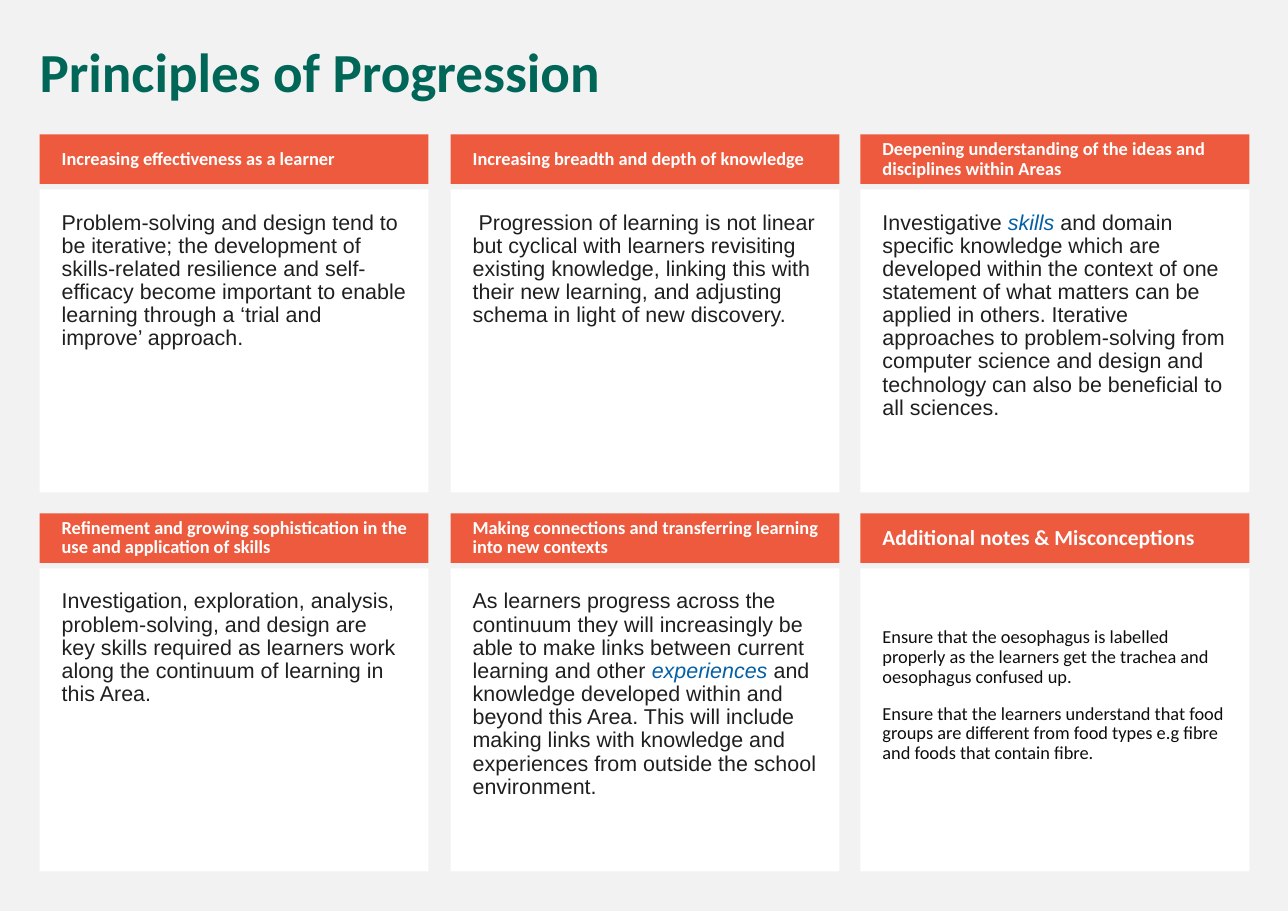
from dataclasses import dataclass

from pptx import Presentation
from pptx import util as u
from pptx.dml import color
from pptx.enum import shapes, text

HUES = {
    "back": "F2F2F2",
    "card": "FFFFFF",
    "head": "ED5A3E",
    "title": "006758",
    "body": "1F1F1F",
    "link": "0360A6",
    "note": "0D0D0D",
}

# Grid of cards
COLS = (0.36, 4.09, 7.81)
TOP, PITCH = 1.22, 3.44
WIDTH, HEAD_H, BODY_H = 3.53, 0.45, 2.75
BODY_DY = 0.5


@dataclass
class Card:
    head: str
    body: tuple[str, ...]  # words between asterisks are linked terms
    head_size: int = 12
    size: int = 14
    font: str = "Arial"
    hue: str = "body"
    inset: float = 0.2


CARDS = [
    Card("Increasing effectiveness as a learner",
         ("Problem-solving and design tend to be iterative; the development of "
          "skills-related resilience and self-efficacy become important to "
          "enable learning through a ‘trial and improve’ approach.",)),
    Card("Increasing breadth and depth of knowledge",
         (" Progression of learning is not linear but cyclical with learners "
          "revisiting existing knowledge, linking this with their new learning, "
          "and adjusting schema in light of new discovery.",)),
    Card("Deepening understanding of the ideas and disciplines within Areas",
         ("Investigative *skills* and domain specific knowledge which are "
          "developed within the context of one statement of what matters can be "
          "applied in others. Iterative approaches to problem-solving from "
          "computer science and design and technology can also be beneficial to "
          "all sciences.",)),
    Card("Refinement and growing sophistication in the use and application of skills",
         ("Investigation, exploration, analysis, problem-solving, and design are "
          "key skills required as learners work along the continuum of learning "
          "in this Area.",)),
    Card("Making connections and transferring learning into new contexts",
         ("As learners progress across the continuum they will increasingly be "
          "able to make links between current learning and other *experiences* "
          "and knowledge developed within and beyond this Area. This will include "
          "making links with knowledge and experiences from outside the school "
          "environment.",)),
    Card("Additional notes & Misconceptions",
         ("Ensure that the oesophagus is labelled properly as the "
          "learners get the trachea and oesophagus confused up. ",
          "Ensure that the learners understand that food groups "
          "are different from food types e.g fibre and foods "
          "that contain fibre."),
         head_size=14, size=12, font="Calibri", hue="note", inset=0.54),
]


def rgb(name: str) -> color.RGBColor:
    return color.RGBColor.from_string(HUES[name])


def write(shape, *paras: str, size: int, hue: str, font: str = "Calibri",
          bold: bool = False, anchor=text.MSO_ANCHOR.TOP,
          pad: tuple[float, ...] = (0.1, 0.05, 0.1, 0.05)) -> None:
    """Fill a shape with paragraphs; pad is left, top, right, bottom."""
    frame = shape.text_frame
    frame.word_wrap = True
    frame.auto_size = text.MSO_AUTO_SIZE.NONE
    frame.vertical_anchor = anchor
    (frame.margin_left, frame.margin_top,
     frame.margin_right, frame.margin_bottom) = map(u.Inches, pad)
    for num, words in enumerate(paras):
        para = frame.add_paragraph() if num else frame.paragraphs[0]
        para.alignment = text.PP_ALIGN.LEFT
        para.line_spacing = 0.9
        para.space_before = u.Pt(11)
        for part, chunk in enumerate(words.split("*")):
            link = part % 2 == 1
            run = para.add_run()
            run.text = chunk
            run.font.name = font
            run.font.size = u.Pt(size)
            run.font.bold = bold
            run.font.italic = link
            run.font.color.rgb = rgb("link" if link else hue)


def panel(slide, left: float, top: float, high: float, hue: str):
    """Add a plain filled box one column wide."""
    box = slide.shapes.add_shape(
        shapes.MSO_SHAPE.RECTANGLE,
        *map(u.Inches, (left, top, WIDTH, high)))
    box.shadow.inherit = False
    box.fill.solid()
    box.fill.fore_color.rgb = rgb(hue)
    box.line.fill.background()
    return box


def draw(slide, card: Card, left: float, top: float) -> None:
    body = panel(slide, left, top + BODY_DY, BODY_H, "card")
    write(body, *card.body, size=card.size, hue=card.hue, font=card.font,
          pad=(0.2, card.inset, 0.2, 0.2))
    head = panel(slide, left, top, HEAD_H, "head")
    write(head, card.head, size=card.head_size, hue="card", bold=True,
          anchor=text.MSO_ANCHOR.MIDDLE, pad=(0.2, 0.05, 0.1, 0.05))


def main() -> None:
    deck = Presentation()
    deck.slide_width, deck.slide_height = u.Inches(11.69), u.Inches(8.27)
    slide = deck.slides.add_slide(deck.slide_layouts[5])
    slide.background.fill.solid()
    slide.background.fill.fore_color.rgb = rgb("back")

    # Title
    title = slide.shapes.title
    title.left, title.top = u.Inches(0.26), u.Inches(0.36)
    title.width, title.height = u.Inches(11.08), u.Inches(0.65)
    write(title, "Principles of Progression", size=36, hue="title", bold=True)

    # Cards, row by row
    for num, card in enumerate(CARDS):
        row, col = divmod(num, len(COLS))
        draw(slide, card, COLS[col], TOP + row * PITCH)

    deck.save("out.pptx")


if __name__ == "__main__":
    main()
